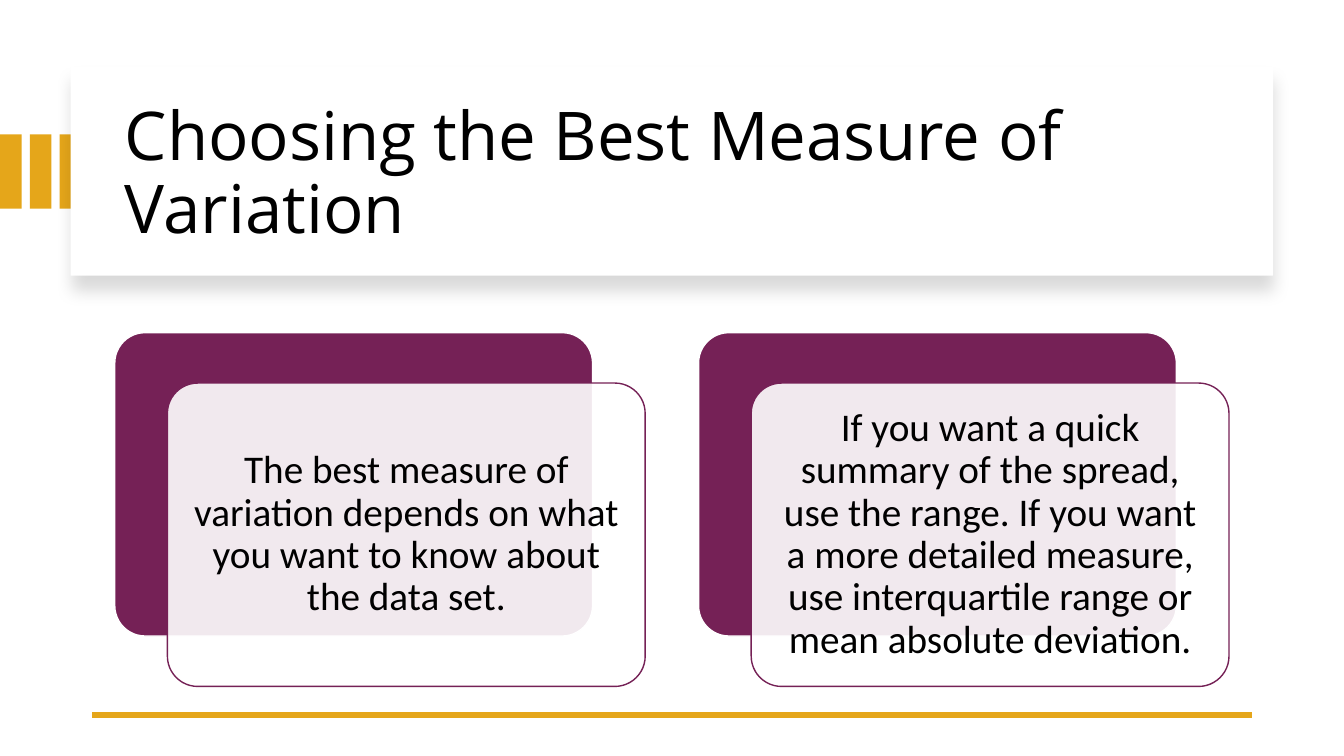
from dataclasses import dataclass

from lxml import etree
from pptx import Presentation
from pptx.dml.color import RGBColor
from pptx.enum import shapes, text
from pptx.oxml import ns
from pptx.util import Pt


@dataclass(frozen=True)
class Theme:
    gold: RGBColor = RGBColor(0xE5, 0xA6, 0x1A)
    plum: RGBColor = RGBColor(0x75, 0x21, 0x56)
    white: RGBColor = RGBColor(0xFF, 0xFF, 0xFF)
    black: RGBColor = RGBColor(0, 0, 0)
    title_font: str = "Open Sans"
    body_font: str = "Calibri"
    title_size: int = 48
    body_size: int = 28


THEME = Theme()

STATEMENTS = [
    "The best measure of variation depends on what you want to know about the data set.",
    "If you want a quick summary of the spread, use the range. If you want a more "
    "detailed measure, use interquartile range or mean absolute deviation.",
]


def add_child(parent, tag, **attributes):
    return etree.SubElement(parent, ns.qn(tag), attributes)


def add_block(slide, kind, box, fill, line=None):
    shape = slide.shapes.add_shape(kind, *map(Pt, box))
    shape.shadow.inherit = False
    shape.fill.solid()
    shape.fill.fore_color.rgb = fill
    if line is None:
        shape.line.fill.background()
    else:
        shape.line.color.rgb = line
        shape.line.width = Pt(1)
    return shape


def add_drop_shadow(shape):
    effects = shape._element.spPr.find(ns.qn("a:effectLst"))
    shadow = add_child(effects, "a:outerShdw", blurRad=str(Pt(11)), dist=str(Pt(10)),
                       dir="5400000", algn="t", rotWithShape="0")
    color = add_child(shadow, "a:srgbClr", val=str(THEME.black))
    add_child(color, "a:alpha", val="15000")


def set_text(shape, words, font, size, alignment, insets):
    frame = shape.text_frame
    frame.word_wrap = True
    frame.vertical_anchor = text.MSO_ANCHOR.MIDDLE
    frame.margin_left = frame.margin_right = Pt(insets[0])
    frame.margin_top = frame.margin_bottom = Pt(insets[1])
    frame.text = words
    paragraph = frame.paragraphs[0]
    paragraph.alignment = alignment
    paragraph.line_spacing = 0.9
    run_font = paragraph.runs[0].font
    run_font.name = font
    run_font.size = Pt(size)
    run_font.color.rgb = THEME.black


def add_title(slide, words):
    # Gold stripes run under the left edge of the panel
    for index in range(3):
        add_block(slide, shapes.MSO_SHAPE.RECTANGLE, (21.3 * index, 96, 15.4, 53),
                  THEME.gold)
    panel = add_block(slide, shapes.MSO_SHAPE.RECTANGLE, (50.5, 48, 859, 149),
                      THEME.white)
    add_drop_shadow(panel)
    title = slide.shapes.add_textbox(Pt(82), Pt(64), Pt(801), Pt(122.5))
    set_text(title, words, THEME.title_font, THEME.title_size,
             text.PP_ALIGN.LEFT, (7.2, 3.6))


def add_rule(slide, left, right, top):
    rule = slide.shapes.add_connector(shapes.MSO_CONNECTOR.STRAIGHT,
                                      Pt(right), Pt(top), Pt(left), Pt(top))
    rule.line.color.rgb = THEME.gold
    rule.line.width = Pt(4.5)
    add_child(rule._element.spPr, "a:effectLst")


def add_card(slide, left, top, words):
    width, height, shift_x, shift_y = 341.3, 216.7, 37.6, 36
    rounded = shapes.MSO_SHAPE.ROUNDED_RECTANGLE
    back = add_block(slide, rounded, (left, top, width, height),
                     THEME.plum, THEME.white)
    front = add_block(slide, rounded, (left + shift_x, top + shift_y, width, height),
                      THEME.white, THEME.plum)
    for shape in (back, front):
        shape.adjustments[0] = 0.1
    fill_color = front._element.spPr.find(ns.qn("a:solidFill"))[0]
    add_child(fill_color, "a:alpha", val="90000")
    set_text(front, words, THEME.body_font, THEME.body_size,
             text.PP_ALIGN.CENTER, (8.6, 8.6))


def main():
    presentation = Presentation()
    presentation.slide_width, presentation.slide_height = Pt(960), Pt(540)
    slide = presentation.slides.add_slide(presentation.slide_layouts[6])

    # Heading and bottom rule
    add_title(slide, "Choosing the Best Measure of Variation")
    add_rule(slide, left=66, right=894, top=510.5)

    # Statement cards, side by side
    for index, words in enumerate(STATEMENTS):
        add_card(slide, 82 + 417 * index, 237.6, words)

    presentation.save("out.pptx")


if __name__ == "__main__":
    main()
